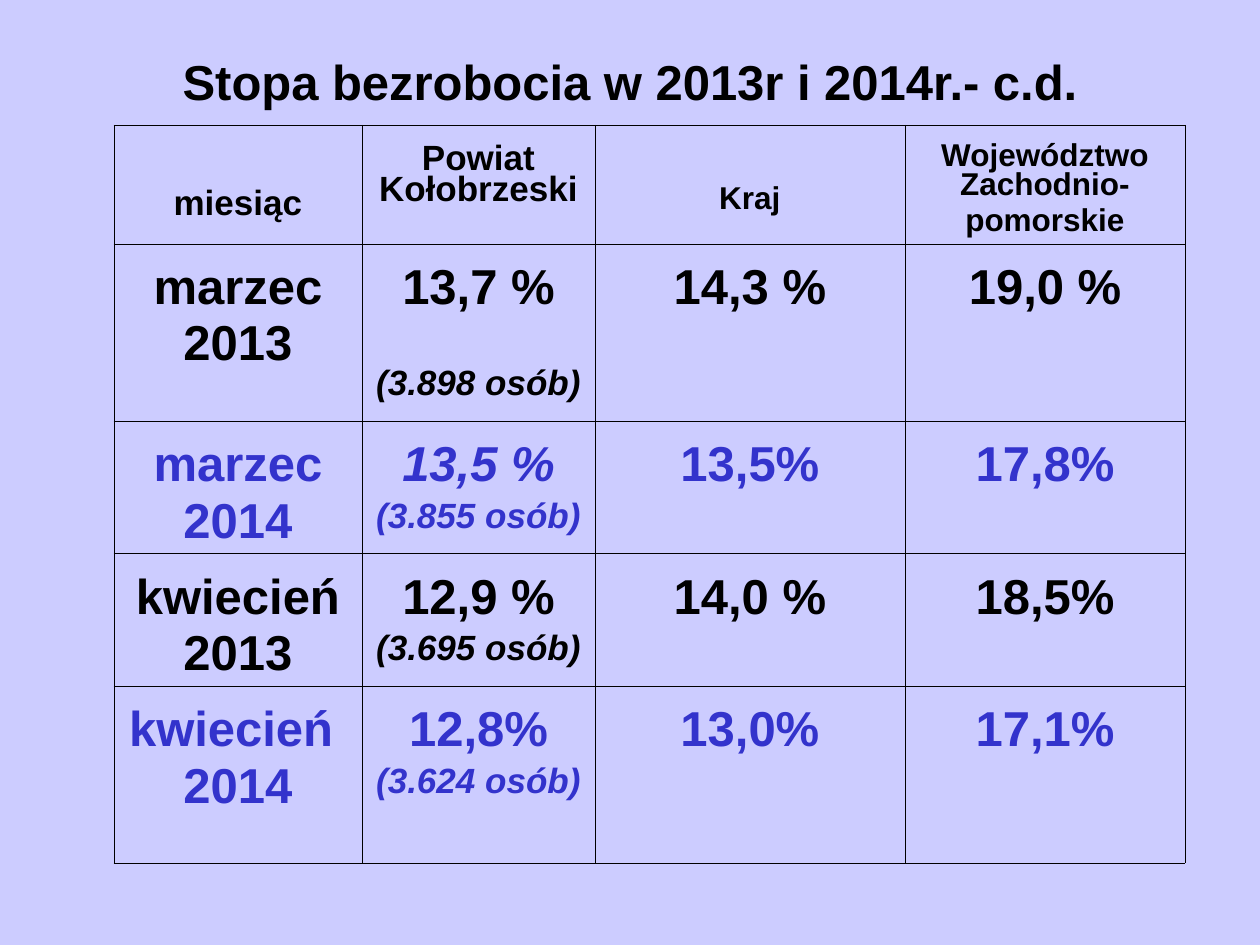
from lxml.etree import SubElement
from pptx import Presentation
from pptx.dml.color import RGBColor
from pptx.enum.text import MSO_ANCHOR, MSO_AUTO_SIZE, PP_ALIGN
from pptx.oxml.ns import qn
from pptx.util import Pt

LAVENDER = RGBColor(0xCC, 0xCC, 0xFF)
BLACK = RGBColor(0x00, 0x00, 0x00)
BLUE = RGBColor(0x33, 0x33, 0xCC)

COLUMN_WIDTHS = [141.7, 133.2, 177.1, 160.2]
ROW_HEIGHTS = [68, 101.2, 75.7, 75.8, 101.2]
OUTER_LINE, INNER_LINE = 0.23, 0.11

HEADERS = [
    (["miesiąc"], 20, 37.2, 4.5),
    (["Powiat Kołobrzeski"], 20, 11.5, 5),
    (["Kraj"], 18, 35.1, 4.5),
    (["Województwo Zachodnio-", "pomorskie"], 18, 10.8, 4.5),
]
MONTHS = [
    ("marzec", "2013", "13,7 %", "(3.898 osób)", "14,3 %", "19,0 %"),
    ("marzec", "2014", "13,5 %", "(3.855 osób)", "13,5%", "17,8%"),
    ("kwiecień", "2013", "12,9 %", "(3.695 osób)", "14,0 %", "18,5%"),
    ("kwiecień ", "2014", "12,8%", "(3.624 osób)", "13,0%", "17,1%"),
]
WIDE_GAP_COUNT = "(3.898 osób)"
ITALIC_RATE = "13,5 %"


def apply_format(target, values):
    for name, value in values.items():
        setattr(target, name, value)


def write_span(para, text, size, color=BLACK, italic=False):
    span = para.add_run()
    span.text = text
    apply_format(span.font, {"name": "Arial", "size": Pt(size), "bold": True, "italic": italic})
    span.font.color.rgb = color


def add_title(page, text):
    title = page.shapes.title
    apply_format(title, {"left": Pt(36), "top": Pt(21.6), "width": Pt(648), "height": Pt(49.7)})
    frame = title.text_frame
    apply_format(frame, {
        "word_wrap": True, "auto_size": MSO_AUTO_SIZE.NONE, "vertical_anchor": MSO_ANCHOR.MIDDLE,
        "margin_left": Pt(7.2), "margin_right": Pt(7.2),
        "margin_top": Pt(3.6), "margin_bottom": Pt(3.6),
    })
    para = frame.paragraphs[0]
    para.alignment = PP_ALIGN.CENTER
    write_span(para, text, 28)


def write_cell(cell, lines, margin_top, gap):
    apply_format(cell, {
        "margin_left": Pt(7.2), "margin_right": Pt(7.2), "margin_top": Pt(margin_top),
        "margin_bottom": Pt(3.6), "vertical_anchor": MSO_ANCHOR.TOP,
    })
    frame = cell.text_frame
    for index, (text, size, color, italic) in enumerate(lines):
        para = frame.add_paragraph() if index else frame.paragraphs[0]
        space = 32.2 if text == WIDE_GAP_COUNT else gap
        apply_format(para, {
            "alignment": PP_ALIGN.CENTER, "line_spacing": 0.81, "space_before": Pt(space),
        })
        write_span(para, text, size, color, italic)


def draw_borders(cell, row, column):
    outer_sides = {
        "L": column == 0,
        "R": column == len(COLUMN_WIDTHS) - 1,
        "T": row == 0,
        "B": row == len(ROW_HEIGHTS) - 1,
    }
    properties = cell._tc.get_or_add_tcPr()
    for side, is_outer in outer_sides.items():
        width = Pt(OUTER_LINE if is_outer else INNER_LINE)
        line = SubElement(properties, qn(f"a:ln{side}"), w=str(width))
        fill = SubElement(line, qn("a:solidFill"))
        SubElement(fill, qn("a:srgbClr"), val=str(BLACK))
    cell.fill.background()


def add_rate_table(page):
    frame = page.shapes.add_table(
        len(ROW_HEIGHTS), len(COLUMN_WIDTHS),
        Pt(65.1), Pt(71.4), Pt(sum(COLUMN_WIDTHS)), Pt(sum(ROW_HEIGHTS)),
    )
    table = frame.table
    apply_format(table, {"first_row": False, "horz_banding": False})
    for column, width in zip(table.columns, COLUMN_WIDTHS):
        column.width = Pt(width)
    for row, height in zip(table.rows, ROW_HEIGHTS):
        row.height = Pt(height)
    for column, (texts, size, margin_top, gap) in enumerate(HEADERS):
        lines = [(text, size, BLACK, False) for text in texts]
        write_cell(table.cell(0, column), lines, margin_top, gap)
    for row, (month, year, rate, count, country, region) in enumerate(MONTHS, start=1):
        color = BLUE if year == "2014" else BLACK
        cells = [
            [(month, 28, color, False), (year, 28, color, False)],
            [(rate, 28, color, rate == ITALIC_RATE), (count, 20, color, True)],
            [(country, 28, color, False)],
            [(region, 28, color, False)],
        ]
        for column, lines in enumerate(cells):
            write_cell(table.cell(row, column), lines, 14.4, 7)
    for row in range(len(ROW_HEIGHTS)):
        for column in range(len(COLUMN_WIDTHS)):
            draw_borders(table.cell(row, column), row, column)


def main():
    deck = Presentation()
    apply_format(deck, {"slide_width": Pt(720), "slide_height": Pt(540)})
    page = deck.slides.add_slide(deck.slide_layouts[5])
    page.background.fill.solid()
    page.background.fill.fore_color.rgb = LAVENDER
    add_title(page, "Stopa bezrobocia w 2013r i 2014r.- c.d.")
    add_rate_table(page)
    deck.save("out.pptx")


if __name__ == "__main__":
    main()
